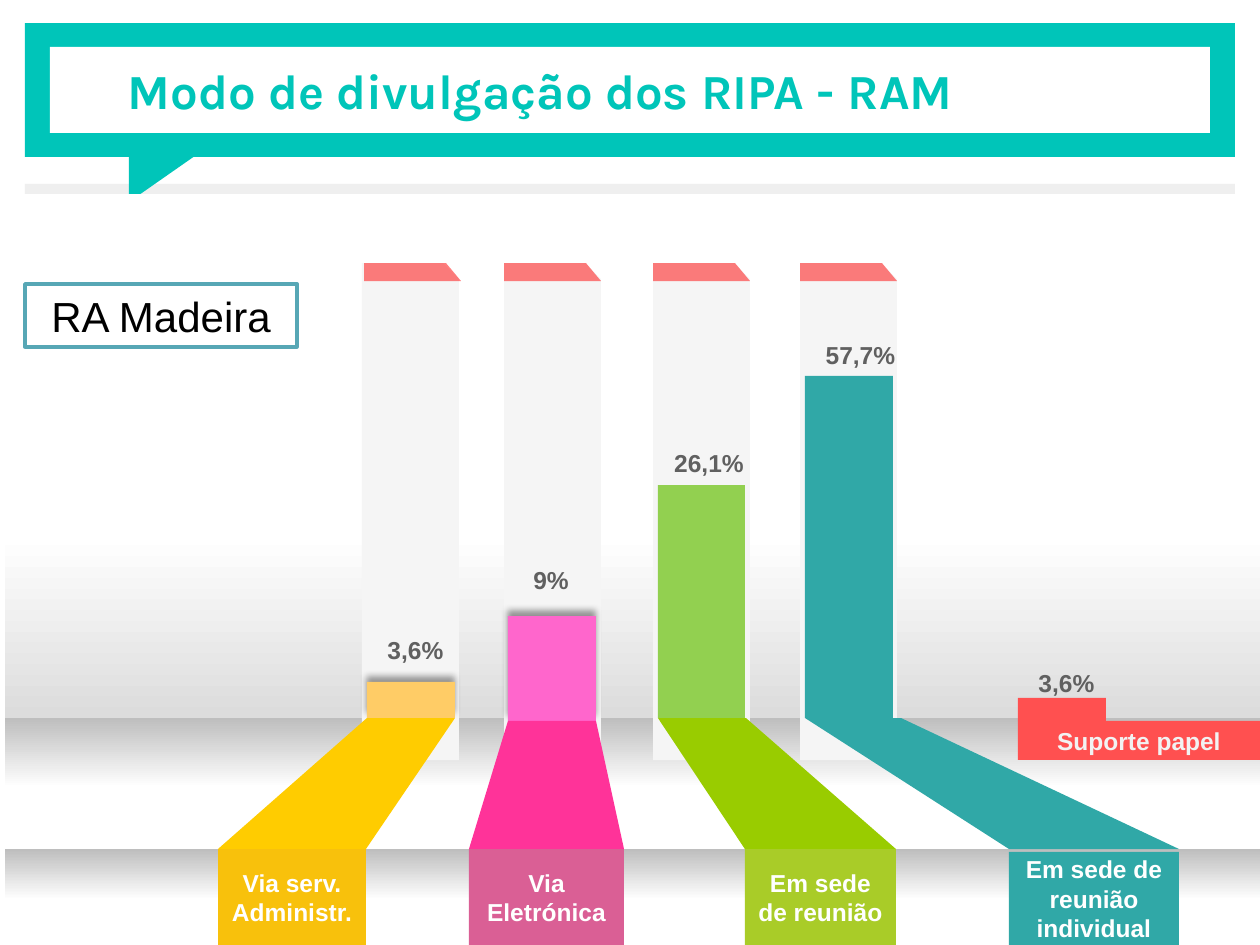
"""Build the slide on how RIPA are publicised in RA Madeira."""
import pptx
import pptx.dml.color
import pptx.enum.dml
import pptx.enum.shapes
import pptx.enum.text
import pptx.oxml
import pptx.oxml.ns
import pptx.util

TITLE = "Modo de divulgação dos RIPA - RAM"
REGION = "RA Madeira"
COLORS = {
    "teal": "00C5B9", "white": "FFFFFF", "strip": "EFEFEF", "wall": "DCDCDC",
    "floor": "BEBEBE", "column": "F5F5F5", "cap": "FF0000", "value": "606060",
    "paper": "FF5050", "paper text": "F2F2F2", "frame": "57A7B5", "black": "000000",
}
CHANNELS = [
    dict(name="Via serv. Administr.", value="3,6%", label=(365, 629, 101), column=362, cap=364,
         bar=(367, 682, 88, 36), ramp_right=455, tag=(218, 849, 148), shadow=True,
         colors=("FFCC66", "FFCC00", "F8C10C")),
    dict(name="Via Eletrónica", value="9%", label=(491, 559, 120), column=504, cap=504,
         bar=(508, 616, 88, 105), ramp_right=596, tag=(469, 849, 155), shadow=True,
         colors=("FF66CC", "FF3399", "DA5F95")),
    dict(name="Em sede de reunião", value="26,1%", label=(650, 442, 118), column=653, cap=653,
         bar=(658, 485, 87, 233), ramp_right=746, tag=(745, 849, 151), shadow=False,
         colors=("92D050", "99CC00", "A9CC28")),
    dict(name="Em sede de reunião individual", value="57,7%", label=(810, 334, 101), column=800,
         cap=800, bar=(805, 376, 88, 342), ramp_right=901, tag=(1009, 852, 170), shadow=False,
         colors=("30A8A7", "30A8A7", "30A8A7")),
]
PAPER = dict(name="Suporte papel", value="3,6%", label=(1016, 662, 101),
             bar=(1018, 698, 88, 23), tag=(1018, 721, 242, 39))
GRADIENTS = [
    ((5, 194, 1255, 524), "wall", 0.35, 90),
    ((5, 718, 1255, 131), "floor", 0.53, 270),
    ((5, 849, 1255, 96), "floor", 0.53, 270),
]
SLIDE_W, SLIDE_H = 1260, 945
COLUMN_TOP, COLUMN_W, COLUMN_H = 263, 97, 497
CAP_H, CAP_CUT = 18, 15
LABEL_H = 43
SCALE = 914400 / 126
SHAPES = pptx.enum.shapes.MSO_SHAPE
ALIGN = pptx.enum.text.PP_ALIGN
ANCHOR = pptx.enum.text.MSO_ANCHOR
NS = pptx.oxml.ns.nsdecls("a")


def emu(*lengths):
    return [round(length * SCALE) for length in lengths]


def rgb(color):
    return pptx.dml.color.RGBColor.from_string(COLORS.get(color, color))


def paint(shape, color):
    shape.shadow.inherit = False
    shape.fill.solid()
    shape.fill.fore_color.rgb = rgb(color)
    shape.line.fill.background()
    return shape


def block(box, color, kind=SHAPES.RECTANGLE):
    return paint(slide.shapes.add_shape(kind, *emu(*box)), color)


def outline(points, color):
    builder = slide.shapes.build_freeform(*points[0], scale=SCALE)
    builder.add_line_segments(points[1:], close=True)
    return paint(builder.convert_to_shape(), color)


def gradient(box, color, reach, angle):
    band = block(box, color)
    band.fill.gradient()
    band.fill.gradient_angle = angle
    start, end = band.fill.gradient_stops
    start.position, start.color.rgb = 0, rgb(color)
    end.position, end.color.rgb = reach, rgb("white")


def write(shape, text, size, color, bold=True, align=ALIGN.CENTER, anchor=ANCHOR.MIDDLE,
          font="Arial"):
    frame = shape.text_frame
    frame.word_wrap = True
    frame.vertical_anchor = anchor
    paragraph = frame.paragraphs[0]
    paragraph.alignment = align
    run = paragraph.add_run()
    run.text = text
    run.font.name = font
    run.font.size = pptx.util.Pt(size)
    run.font.bold = bold
    run.font.color.rgb = rgb(color)


def add_value(text, place):
    label = slide.shapes.add_textbox(*emu(*place, LABEL_H))
    write(label, text, 14, "value", anchor=ANCHOR.TOP)


def cast_shadow(shape):
    effects = shape._element.spPr.find(pptx.oxml.ns.qn("a:effectLst"))
    effects.append(pptx.oxml.parse_xml(
        f'<a:outerShdw {NS} blurRad="50800" dist="38100" dir="16200000" rotWithShape="0">'
        '<a:srgbClr val="000000"><a:alpha val="40000"/></a:srgbClr></a:outerShdw>'))


def add_cap(left):
    right, bottom = left + COLUMN_W, COLUMN_TOP + CAP_H
    cap = outline([(left, COLUMN_TOP), (right - CAP_CUT, COLUMN_TOP),
                   (right, bottom), (left, bottom)], "cap")
    tint = cap._element.spPr.find(".//" + pptx.oxml.ns.qn("a:srgbClr"))
    tint.append(pptx.oxml.parse_xml(f'<a:alpha {NS} val="50000"/>'))


def add_channel(channel):
    bar_color, ramp_color, tag_color = channel["colors"]
    block((channel["column"], COLUMN_TOP, COLUMN_W, COLUMN_H), "column",
          SHAPES.SNIP_1_RECTANGLE)
    bar = block(channel["bar"], bar_color)
    if channel["shadow"]:
        cast_shadow(bar)
    add_cap(channel["cap"])
    left, top, _, height = channel["bar"]
    tag_left, tag_top, tag_w = channel["tag"]
    ramp_top, ramp_bottom = top + height, 849
    outline([(left, ramp_top), (channel["ramp_right"], ramp_top),
             (tag_left + tag_w, ramp_bottom), (tag_left, ramp_bottom)], ramp_color)
    tag = block((tag_left, tag_top, tag_w, SLIDE_H - tag_top), tag_color)
    write(tag, channel["name"], 14, "white")
    add_value(channel["value"], channel["label"])


deck = pptx.Presentation()
deck.slide_width, deck.slide_height = emu(SLIDE_W, SLIDE_H)
slide = deck.slides.add_slide(deck.slide_layouts[5])

block((25, 184, 1210, 738), "strip")
block((25, 23, 1210, 134), "teal")
outline([(129, 142), (215, 142), (129, 202)], "teal")
block((50, 47, 1160, 86), "white")
for band in GRADIENTS:
    gradient(*band)

heading = slide.shapes.title
slide.shapes._spTree.append(heading._element)
heading.left, heading.top, heading.width, heading.height = emu(115, 23, 1096, 134)
heading.text_frame.auto_size = pptx.enum.text.MSO_AUTO_SIZE.NONE
write(heading, TITLE, 28, "teal", align=ALIGN.LEFT, font="Karla")

for channel in CHANNELS:
    add_channel(channel)

block(PAPER["bar"], "paper")
add_value(PAPER["value"], PAPER["label"])
write(block(PAPER["tag"], "paper"), PAPER["name"], 14, "paper text")

region = block((25, 284, 272, 63), "white")
region.line.color.rgb = rgb("frame")
region.line.width = pptx.util.Pt(2)
write(region, REGION, 24, "black", bold=False)

deck.save("out.pptx")
